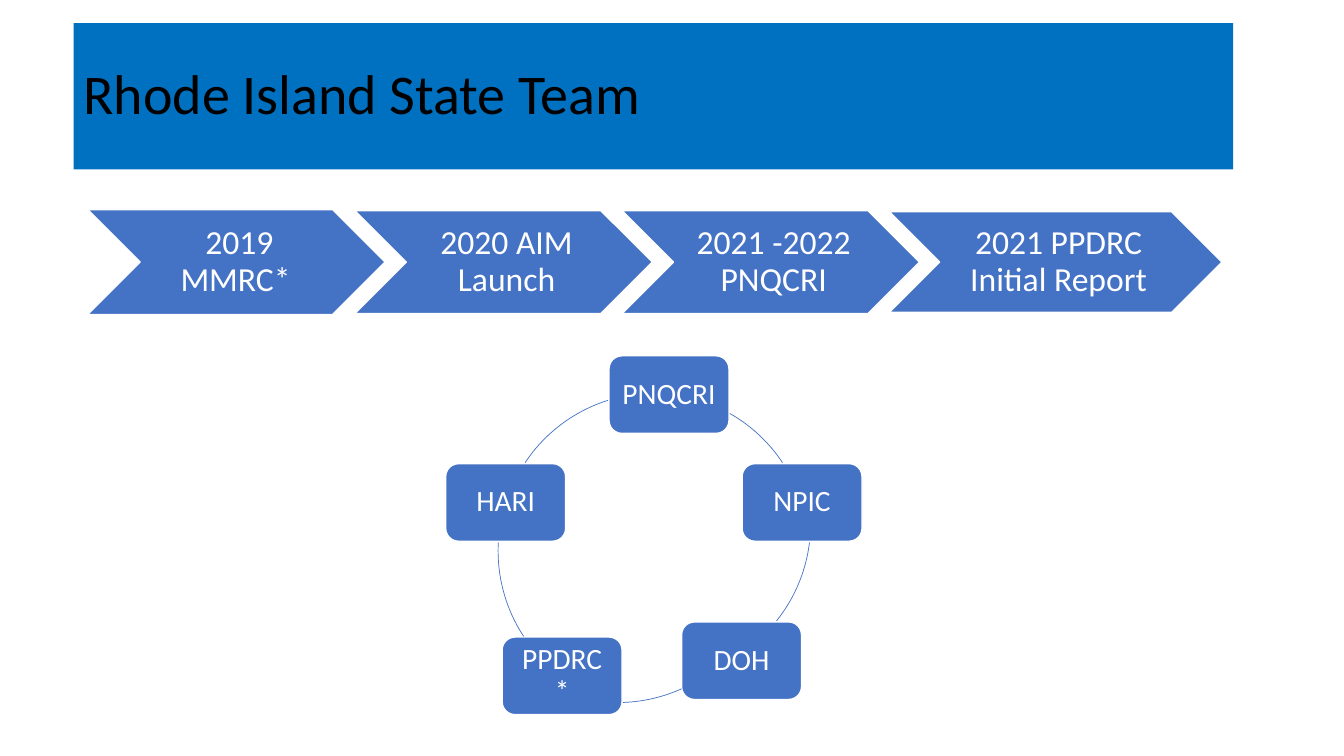
from pptx import Presentation
from pptx.dml.color import RGBColor
from pptx.enum.shapes import MSO_SHAPE as Shape
from pptx.enum.text import MSO_ANCHOR as Anchor, PP_ALIGN as Align
from pptx.util import Inches, Pt

BANNER_BLUE = RGBColor(0x00, 0x70, 0xC0)
BLUE = RGBColor(0x44, 0x72, 0xC4)
WHITE = RGBColor(0xFF, 0xFF, 0xFF)
BLACK = RGBColor(0x00, 0x00, 0x00)

MILESTONES = [  # text, width, height
    ("2019 MMRC* ", 2.95, 1.04),
    ("2020 AIM Launch", 2.95, 1.02),
    ("2021 -2022 PNQCRI", 2.95, 1.02),
    ("2021 PPDRC Initial Report", 3.3, 1.0),
]
MILESTONE_STEP = 2.65

PARTNER_SIZE = (1.19, 0.77)
ARC_SIZE = 3.09
PARTNERS = [  # text, box offset, offset of the arc that follows, its angles
    ("PNQCRI", (1.62, 0), (0.51, 0.37), (299.6, 326.4)),
    ("NPIC", (2.94, 1.07), (0.53, 0.12), (6.9, 38.7)),
    ("DOH", (2.34, 2.64), (0.16, 0.35), (65.7, 88)),
    ("PPDRC*", (0.56, 2.79), (0.52, 0.39), (146.7, 183.1)),
    ("HARI", (0, 1.07), (0.53, 0.37), (213.6, 252.5)),
]


def add_block(slide, kind, left, top, width, height, fill=None, line=None, line_width=1):
    block = slide.shapes.add_shape(
        kind, Inches(left), Inches(top), Inches(width), Inches(height))
    block.shadow.inherit = False
    if fill is None:
        block.fill.background()
    else:
        block.fill.solid()
        block.fill.fore_color.rgb = fill
    if line is None:
        block.line.fill.background()
    else:
        block.line.color.rgb = line
        block.line.width = Pt(line_width)
    return block


def write(block, text, size, color=WHITE, align=Align.CENTER, insets=(0.1, 0.05, 0.1, 0.05)):
    frame = block.text_frame
    frame.word_wrap = True
    frame.vertical_anchor = Anchor.MIDDLE
    (frame.margin_left, frame.margin_top,
     frame.margin_right, frame.margin_bottom) = map(Inches, insets)
    paragraph = frame.paragraphs[0]
    paragraph.alignment = align
    paragraph.line_spacing = 0.9
    run = paragraph.add_run()
    run.text = text
    run.font.name = "Calibri"
    run.font.size = Pt(size)
    run.font.color.rgb = color


def add_title(slide, left, top, width, height):
    banner = add_block(slide, Shape.RECTANGLE, left, top, width, height, BANNER_BLUE)
    write(banner, "Rhode Island State Team", 40, BLACK, Align.LEFT)


def add_partner_ring(slide, left, top):
    for name, (box_x, box_y), (arc_x, arc_y), angles in PARTNERS:
        partner = add_block(slide, Shape.ROUNDED_RECTANGLE, left + box_x, top + box_y,
                            *PARTNER_SIZE, BLUE, WHITE)
        write(partner, name, 21, insets=(0.09,) * 4)

        # Arc towards the next partner; one degree is 0.6 adjustment units
        arc = add_block(slide, Shape.ARC, left + arc_x, top + arc_y,
                        ARC_SIZE, ARC_SIZE, line=BLUE, line_width=0.5)
        for index, angle in enumerate(angles):
            arc.adjustments[index] = angle * 0.6


def add_timeline(slide, left, middle):
    for index, (text, width, height) in enumerate(MILESTONES):
        milestone = add_block(slide, Shape.CHEVRON, left + index * MILESTONE_STEP,
                              middle - height / 2, width, height, BLUE, WHITE)
        write(milestone, text, 24, insets=(0.1, 0.04, 0.04, 0.04))


def main():
    deck = Presentation()
    deck.slide_width, deck.slide_height = Inches(13.33), Inches(7.5)
    slide = deck.slides.add_slide(deck.slide_layouts[6])
    add_title(slide, 0.73, 0.23, 11.5, 1.45)
    add_partner_ring(slide, 4.42, 3.53)
    add_timeline(slide, 0.87, 2.6)
    deck.save("out.pptx")


if __name__ == "__main__":
    main()
